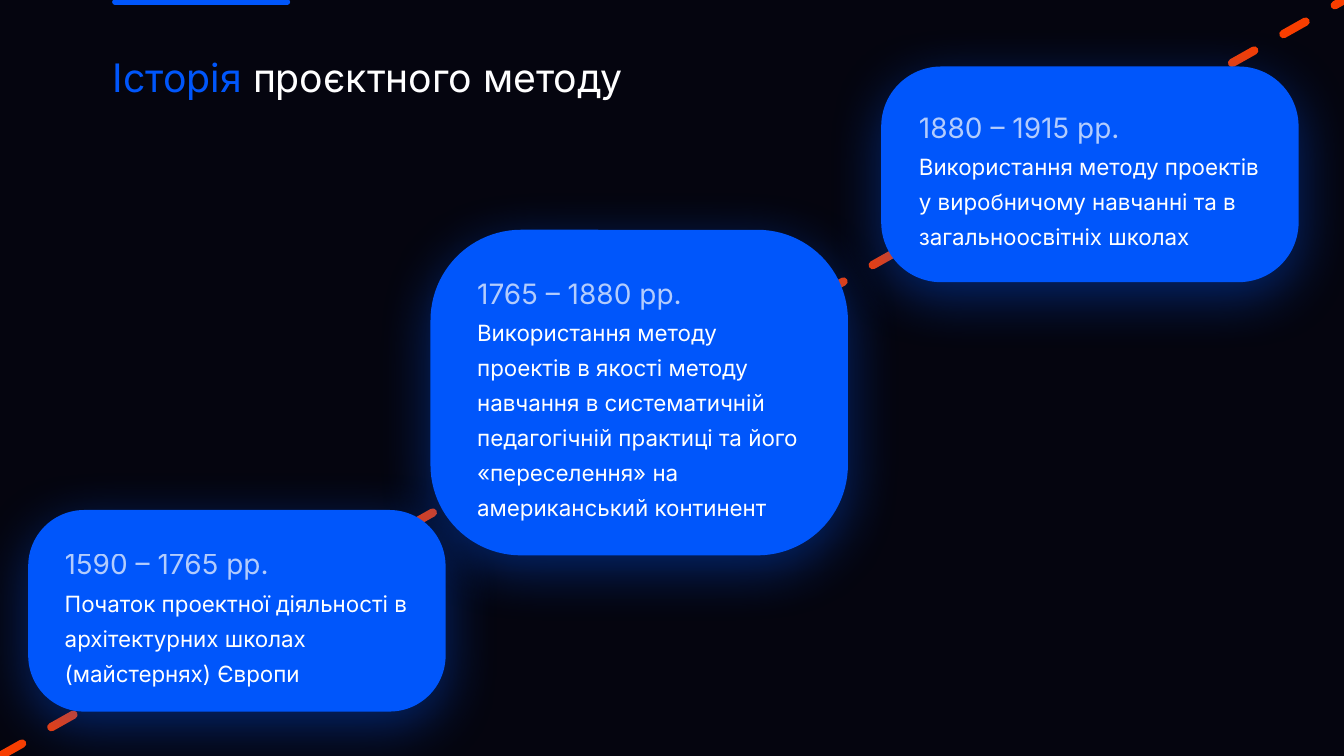
"""Builds a slide with three periods in the history of the project method."""
from lxml import etree
from pptx import Presentation
from pptx.dml import color
from pptx.enum import dml, shapes, text
from pptx.oxml import ns
from pptx.util import Inches, Pt

COLORS = {"night": "05050F", "blue": "0056FB", "orange": "F83E00", "white": "FFFFFF"}
FONT = "Inter"
WIDTH, HEIGHT = 13.33, 7.5
CARD_WIDTH = 4.14
TITLE = [("Історія ", "blue"), ("проєктного методу", "white")]
PERIODS = [
    ("1590 – 1765 рр.",
     "Початок проектної діяльності в архітектурних школах (майстернях) Європи",
     (0.28, 5.06, 2)),
    ("1765 – 1880 рр.",
     "Використання методу проектів в якості методу навчання в систематичній "
     "педагогічній практиці та його «переселення» на американський континент",
     (4.27, 2.28, 3.23)),
    ("1880 – 1915 рр.",
     "Використання методу проектів у виробничому навчанні та в загальноосвітніх школах",
     (8.74, 0.66, 2.14)),
]


def rgb(name):
    return color.RGBColor.from_string(COLORS[name])


def add(parent, tag, **attributes):
    element = etree.SubElement(parent, ns.qn(tag))
    for key, value in attributes.items():
        element.set(key, str(value))
    return element


def add_line(page, start, end, name, width, dash=None):
    line = page.shapes.add_connector(
        shapes.MSO_CONNECTOR.STRAIGHT, *[Inches(value) for value in start + end])
    line.line.color.rgb = rgb(name)
    line.line.width = Pt(width)
    if dash:
        line.line.dash_style = dash
    line.line._ln.set("cap", "rnd")
    add(line._element.spPr, "a:effectLst")


def style(para, size, spacing):
    para.font.name = FONT
    para.font.size = Pt(size)
    para.line_spacing = spacing
    para.alignment = text.PP_ALIGN.LEFT


def set_margins(frame, left, top, right, bottom):
    frame.word_wrap = True
    frame.margin_left, frame.margin_top = Inches(left), Inches(top)
    frame.margin_right, frame.margin_bottom = Inches(right), Inches(bottom)


def add_title(page):
    box = page.shapes.add_textbox(Inches(1.12), Inches(0.58), Inches(6.9), Inches(1.69))
    set_margins(box.text_frame, 0, 0, 0, 0)
    para = box.text_frame.paragraphs[0]
    style(para, 28, 0.9)
    for words, name in TITLE:
        span = para.add_run()
        span.text = words
        span.font.color.rgb = rgb(name)


def add_glow(card):
    card.shadow.inherit = False
    effects = card._element.spPr.find(ns.qn("a:effectLst"))
    shadow = add(effects, "a:outerShdw", blurRad=Pt(40), dist=Pt(10),
                 dir=90 * 60000, algn="t", rotWithShape=0)
    tint = add(shadow, "a:srgbClr", val=COLORS["blue"])
    add(tint, "a:alpha", val=40000)


def add_card(page, years, summary, place):
    left, top, height = place
    card = page.shapes.add_shape(
        shapes.MSO_SHAPE.ROUNDED_RECTANGLE,
        Inches(left), Inches(top), Inches(CARD_WIDTH), Inches(height))
    card.adjustments[0] = 0.278
    card.fill.solid()
    card.fill.fore_color.rgb = rgb("blue")
    card.line.fill.background()
    add_glow(card)
    frame = card.text_frame
    frame.vertical_anchor = text.MSO_ANCHOR.MIDDLE
    set_margins(frame, 0.2, 0.07, 0.1, 0.05)
    heading, body = frame.paragraphs[0], frame.add_paragraph()
    for para, words, size in ((heading, years, 20), (body, summary, 16)):
        para.text = words
        style(para, size, 1.3)
    heading.space_after = Pt(1)
    body.font.color.rgb = rgb("white")
    span = heading.runs[0]
    span.font.color.rgb = rgb("white")
    tint = span._r.rPr.find(ns.qn("a:solidFill"))[0]
    add(tint, "a:alpha", val=70000)


def main():
    deck = Presentation()
    deck.slide_width, deck.slide_height = Inches(WIDTH), Inches(HEIGHT)
    page = deck.slides.add_slide(deck.slide_layouts[6])
    page.background.fill.solid()
    page.background.fill.fore_color.rgb = rgb("night")
    add_line(page, (1.14, 0.02), (2.85, 0.02), "blue", 4)
    add_line(page, (0, HEIGHT), (WIDTH, 0), "orange", 6, dml.MSO_LINE.DASH)
    add_title(page)
    for period in PERIODS:
        add_card(page, *period)
    deck.save("out.pptx")


if __name__ == "__main__":
    main()
